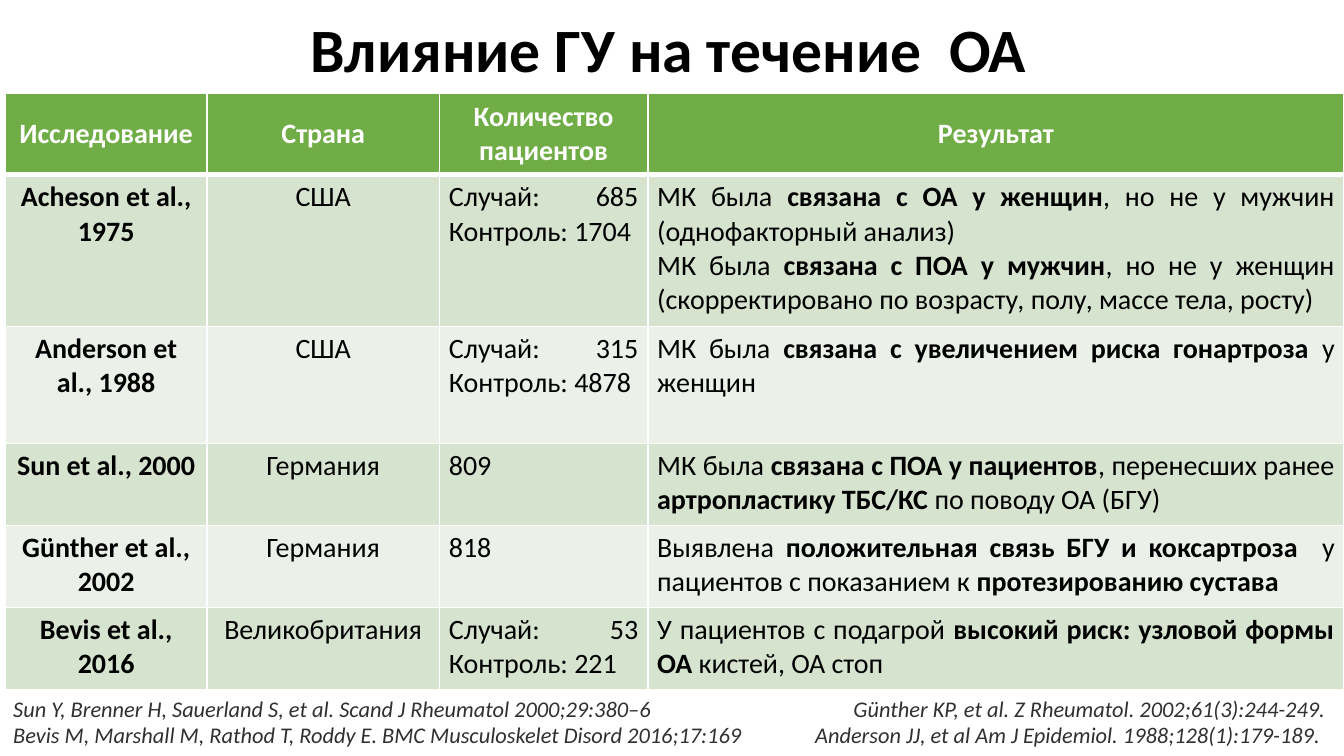
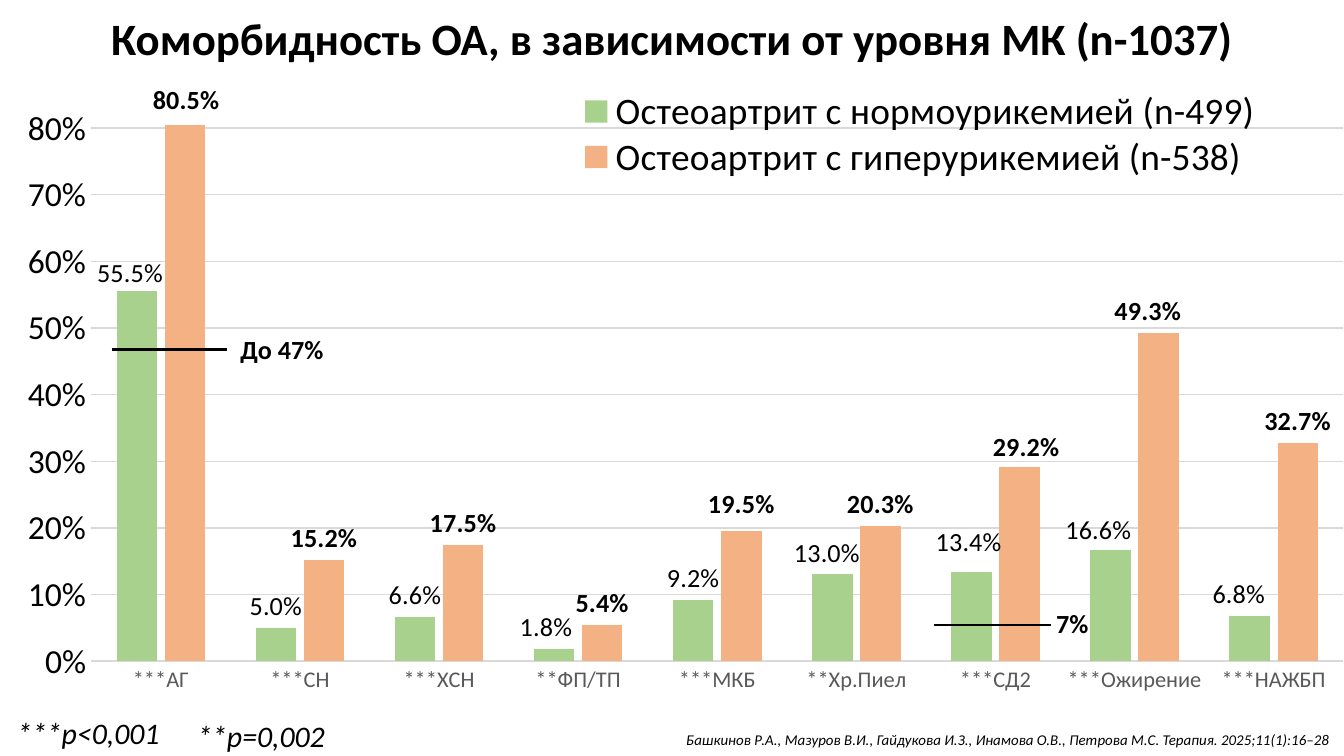
from lxml.etree import SubElement
from pptx import Presentation
from pptx.chart.data import CategoryChartData
from pptx.dml.color import RGBColor
from pptx.enum.chart import XL_CHART_TYPE, XL_LABEL_POSITION, XL_LEGEND_POSITION, XL_TICK_MARK
from pptx.enum.shapes import MSO_CONNECTOR
from pptx.enum.text import MSO_ANCHOR as ANCHOR, PP_ALIGN as ALIGN
from pptx.oxml.ns import qn
from pptx.util import Inches, Pt

FONT = "Calibri"
COLORS = {
    "black": "000000", "white": "FFFFFF", "citation": "303030",
    "header": "70AD47", "odd_row": "D5E3CF", "even_row": "EBF1E9",
    "axis_text": "595959", "grid": "D9D9D9",
    "normal": "A9D18E", "high": "F4B183",
}
RGB = {name: RGBColor.from_string(value) for name, value in COLORS.items()}


def write_text(frame, text, size=14, color="black", bold=False, italic=False,
               align=ALIGN.LEFT, spacing=None, after=None):
    """Newline starts a paragraph, \\v breaks a line, | switches bold on and off."""
    for number, line in enumerate(text.split("\n")):
        paragraph = frame.add_paragraph() if number else frame.paragraphs[0]
        paragraph.alignment = align
        if spacing is not None:
            paragraph.line_spacing = spacing
        if after is not None:
            paragraph.space_after = Pt(after)
        for part_number, part in enumerate(line.split("|")):
            for piece_number, piece in enumerate(part.split("\v")):
                if piece_number:
                    paragraph.add_line_break()
                if not piece:
                    continue
                run = paragraph.add_run()
                run.text = piece
                run.font.name = FONT
                run.font.size = Pt(size)
                run.font.bold = bold != (part_number % 2 == 1)
                run.font.italic = italic
                run.font.color.rgb = RGB[color]


def add_layout(parent, position, **values):
    """Place a manual chart layout at the given child position."""
    layout = SubElement(parent, qn("c:layout"))
    manual = SubElement(layout, qn("c:manualLayout"))
    for tag, value in values.items():
        SubElement(manual, qn(f"c:{tag}")).set("val", str(value))
    parent.insert(position, layout)


# Widescreen 16:9
presentation = Presentation()
presentation.slide_width = Inches(10)
presentation.slide_height = presentation.slide_width * 9 // 16

# Slides with their titles
slides = []
for title_text, title_size, box in [
    ("Влияние ГУ на течение  ОА", 33, (0.13, 0, 9.69, 0.78)),
    ("Коморбидность ОА, в зависимости от уровня МК (n-1037)", 24, (0, 0, 10, 0.61)),
]:
    slide = presentation.slides.add_slide(presentation.slide_layouts[5])
    title = slide.shapes.title
    title.left, title.top, title.width, title.height = map(Inches, box)
    title.text_frame.vertical_anchor = ANCHOR.MIDDLE
    write_text(title.text_frame, title_text, size=title_size, bold=True,
               align=ALIGN.CENTER, spacing=0.9)
    slides.append(slide)
studies_slide, chart_slide = slides

# Table of studies
studies = [
    ("Исследование", "Страна", "Количество пациентов", "Результат"),
    ("Acheson et al., 1975", "США", "Случай: 685\vКонтроль: 1704",
     "МК была |связана с ОА у женщин|, но не у мужчин (однофакторный анализ)\n"
     "МК была |связана с ПОА у мужчин|, но не у женщин "
     "(скорректировано по возрасту, полу, массе тела, росту)"),
    ("Anderson et al., 1988", "США", "Случай: 315\vКонтроль: 4878",
     "МК была |связана с увеличением риска гонартроза |у женщин "),
    ("Sun et al., 2000", "Германия", "809",
     "МК была |связана с ПОА у пациентов|, перенесших ранее "
     "|артропластику ТБС/КС |по поводу ОА (БГУ)"),
    ("Günther et al., 2002", "Германия", "818",
     "Выявлена |положительная связь БГУ и коксартроза  |у пациентов "
     "с показанием к |протезированию сустава"),
    ("Bevis et al., 2016", "Великобритания", "Случай: 53\vКонтроль: 221",
     "У пациентов с подагрой |высокий риск: узловой формы ОА |кистей, ОА стоп"),
]
column_widths = [1.5, 1.73, 1.55, 5.18]
row_heights = [0.61, 1.13, 0.87, 0.61, 0.61, 0.61]
table = studies_slide.shapes.add_table(
    len(studies), len(column_widths), Inches(0.04), Inches(0.69),
    Inches(9.96), Inches(4.43)).table
for column, width in zip(table.columns, column_widths):
    column.width = Inches(width)
for row, height in zip(table.rows, row_heights):
    row.height = Inches(height)

for row_number, study in enumerate(studies):
    is_header = row_number == 0
    row_fill = "header" if is_header else ("odd_row" if row_number % 2 else "even_row")
    for column_number, text in enumerate(study):
        cell = table.cell(row_number, column_number)
        cell.margin_left = cell.margin_right = Inches(0.07)
        cell.margin_top = cell.margin_bottom = Inches(0.04)
        cell.vertical_anchor = ANCHOR.MIDDLE if is_header else ANCHOR.TOP
        write_text(cell.text_frame, text, size=15,
                   color="white" if is_header else "black",
                   bold=is_header or column_number == 0,
                   align=ALIGN.CENTER if is_header or column_number < 2 else ALIGN.JUSTIFY)
        # Borders come before the fill in the cell properties
        properties = cell._tc.get_or_add_tcPr()
        for side in "LRTB":
            thick = (is_header and side == "B") or (row_number == 1 and side == "T")
            border = SubElement(properties, qn(f"a:ln{side}"), w=str(Pt(3 if thick else 1)))
            border_fill = SubElement(border, qn("a:solidFill"))
            SubElement(border_fill, qn("a:srgbClr"), val=COLORS["white"])
        cell.fill.solid()
        cell.fill.fore_color.rgb = RGB[row_fill]

# Comorbidity chart
chart_data = CategoryChartData(number_format="0.0%")
chart_data.categories = ["***АГ", "***СН", "***ХСН", "**ФП/ТП", "***МКБ",
                         "**Хр.Пиел", "***СД2", "***Ожирение", "***НАЖБП"]
chart_data.add_series("Остеоартрит с нормоурикемией (n-499)",
                      [0.555, 0.05, 0.066, 0.018, 0.092, 0.13, 0.134, 0.166, 0.068])
chart_data.add_series("Остеоартрит с гиперурикемией (n-538)",
                      [0.805, 0.152, 0.175, 0.054, 0.195, 0.203, 0.292, 0.493, 0.327])
chart = chart_slide.shapes.add_chart(
    XL_CHART_TYPE.COLUMN_CLUSTERED, Inches(0), Inches(0.61),
    Inches(10), Inches(4.8), chart_data).chart
chart.has_title = False
chart.font.name = FONT
chart.font.size = Pt(18)
chart.font.color.rgb = RGB["black"]
plot_area = chart._chartSpace.chart.plotArea
for old_layout in plot_area.findall(qn("c:layout")):
    plot_area.remove(old_layout)
add_layout(plot_area, 0, layoutTarget="inner",
           xMode="edge", yMode="edge", x=0.068, y=0.02, w=0.932, h=0.878)

plot = chart.plots[0]
plot.gap_width = 125
plot.overlap = -19
plot.vary_by_categories = False

# Axes
for axis, size, color in [(chart.category_axis, 12, "axis_text"),
                          (chart.value_axis, 18, "black")]:
    axis.major_tick_mark = axis.minor_tick_mark = XL_TICK_MARK.NONE
    axis.tick_labels.font.name = FONT
    axis.tick_labels.font.size = Pt(size)
    axis.tick_labels.font.color.rgb = RGB[color]
value_axis = chart.value_axis
value_axis.minimum_scale = 0
value_axis.maximum_scale = 0.85
value_axis.major_unit = 0.1
value_axis.tick_labels.number_format = "0%"
value_axis.tick_labels.number_format_is_linked = False
value_axis.format.line.fill.background()
value_axis.has_major_gridlines = True
for line in (chart.category_axis.format.line, value_axis.major_gridlines.format.line):
    line.color.rgb = RGB["grid"]
    line.width = Pt(0.75)

# Series; shifted labels are given as point: (x, y) in thousandths of the chart
label_shifts = [
    {0: (-5, 6), 3: (-6, 0), 5: (-4, 0), 6: (-2, -13), 7: (-9, 2), 8: (-8, 0)},
    {0: (1, -5), 4: (0, -9), 6: (5, 3), 7: (-8, 0)},
]
for series, color, bold, shifts in zip(plot.series, ("normal", "high"),
                                       (False, True), label_shifts):
    series.format.fill.solid()
    series.format.fill.fore_color.rgb = RGB[color]
    labels = series.data_labels
    labels.show_value = True
    labels.number_format = "0.0%"
    labels.number_format_is_linked = False
    labels.position = XL_LABEL_POSITION.OUTSIDE_END
    fonts = [labels.font]
    for point_number, (x, y) in shifts.items():
        label = series.points[point_number].data_label
        fonts.append(label.font)
        label.position = XL_LABEL_POSITION.OUTSIDE_END
        element = labels._element.xpath(f'c:dLbl[c:idx/@val="{point_number}"]')[0]
        add_layout(element, 1, x=x / 1000, y=y / 1000)
    for font in fonts:
        font.name = FONT
        font.size = Pt(14)
        font.bold = bold
        font.color.rgb = RGB["black"]

# Legend
chart.has_legend = True
legend = chart.legend
legend.position = XL_LEGEND_POSITION.BOTTOM
legend.include_in_layout = False
legend.font.name = FONT
legend.font.size = Pt(20)
legend.font.color.rgb = RGB["black"]
for old_layout in legend._element.findall(qn("c:layout")):
    legend._element.remove(old_layout)
add_layout(legend._element, 1, xMode="edge", yMode="edge", x=0.42, y=0.01, w=0.53, h=0.14)

# Reference lines
for left, right, top in [(0.83, 1.69, 2.6), (6.95, 7.82, 4.65)]:
    connector = chart_slide.shapes.add_connector(
        MSO_CONNECTOR.STRAIGHT, Inches(left), Inches(top), Inches(right), Inches(top))
    connector.line.color.rgb = RGB["black"]
    connector.line.width = Pt(1.5)
    SubElement(connector._element.spPr, qn("a:effectLst"))

# Citations, reference labels and significance notes
citation = {"size": 12, "color": "citation", "italic": True}
reference = {"size": 14, "bold": True}
significance = {"size": 16, "italic": True, "align": ALIGN.JUSTIFY,
                "spacing": 1.07, "after": 6}
for slide, box, wrap, text, style in [
    (studies_slide, (5, 5.12, 5, 0.5), True,
     "Günther KP, et al. Z Rheumatol. 2002;61(3):244-249. \n"
     "Anderson JJ, et al Am J Epidemiol. 1988;128(1):179-189.  ",
     {**citation, "align": ALIGN.RIGHT}),
    (studies_slide, (0, 5.12, 5.96, 0.5), True,
     "Sun Y, Brenner H, Sauerland S, et al. Scand J Rheumatol 2000;29:380–6\n"
     "Bevis M, Marshall M, Rathod T, Roddy E. BMC Musculoskelet Disord 2016;17:169",
     citation),
    (chart_slide, (0.03, 5.25, 1.31, 0.37), False, "***p<0,001", significance),
    (chart_slide, (1.37, 5.27, 1.17, 0.38), False, "**p=0,002", significance),
    (chart_slide, (1.69, 2.43, 0.94, 0.34), True, "До 47%", reference),
    (chart_slide, (7.76, 4.47, 0.71, 0.34), True, "7%", reference),
    (chart_slide, (0, 5.39, 10, 0.24), True,
     "Башкинов Р.А., Мазуров В.И., Гайдукова И.З., Инамова О.В., Петрова М.С. "
     "Терапия. 2025;11(1):16–28",
     {"size": 8, "italic": True, "align": ALIGN.RIGHT}),
]:
    text_box = slide.shapes.add_textbox(*map(Inches, box))
    text_box.text_frame.word_wrap = wrap
    write_text(text_box.text_frame, text, **style)

presentation.save("out.pptx")
